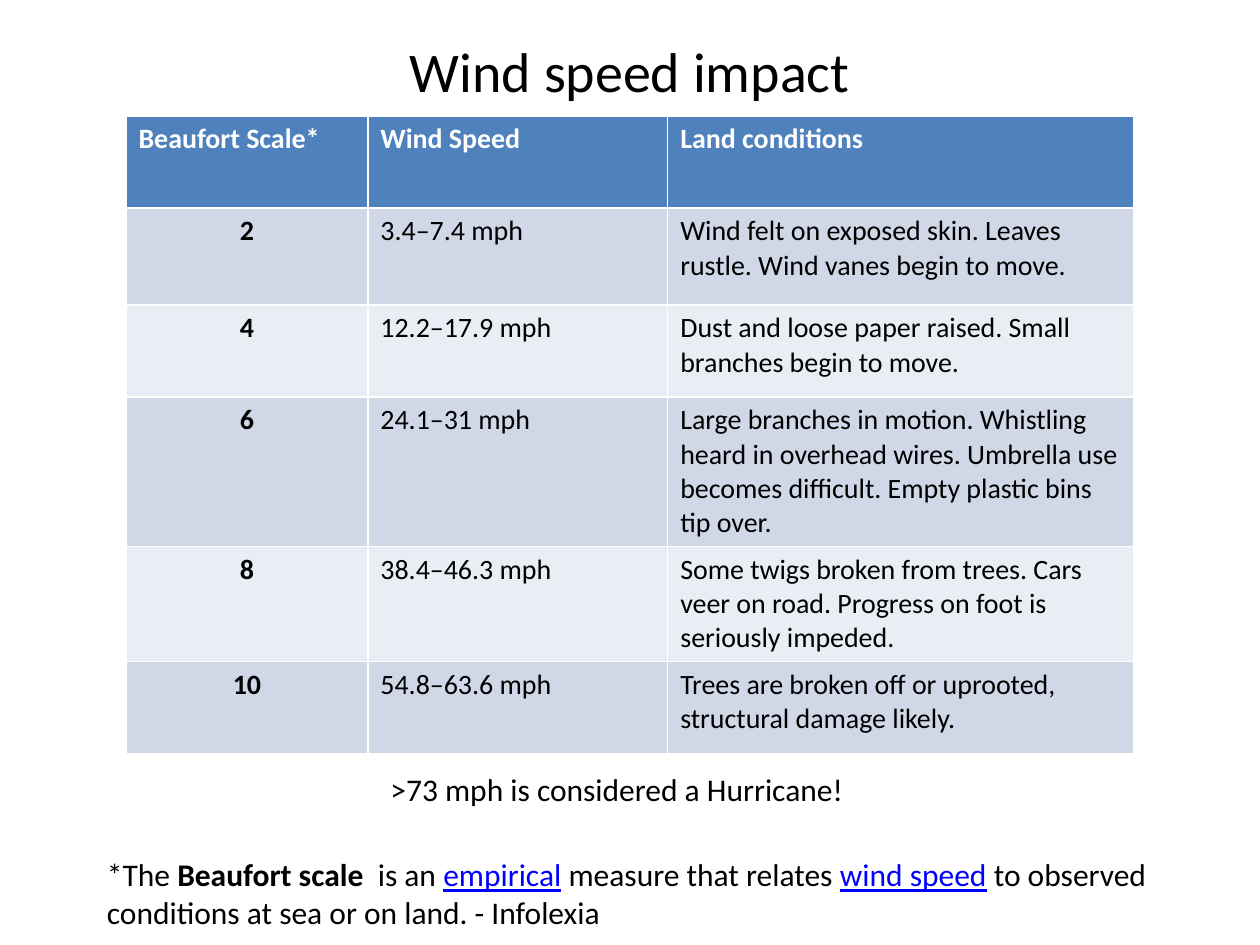
from pptx import Presentation
from pptx.dml.color import RGBColor
from pptx.enum.text import MSO_ANCHOR, PP_ALIGN
from pptx.util import Inches, Pt

CENTER = PP_ALIGN.CENTER
LEFT = PP_ALIGN.LEFT
MIDDLE = MSO_ANCHOR.MIDDLE
FONT = "Calibri"
COLORS = {
    "ink": "000000",
    "white": "FFFFFF",
    "head": "4F81BD",
    "odd": "D0D8E8",
    "even": "E9EDF4",
    "link": "0000FF",
}
WIDE, HIGH = 10, 7.5
COLS = [1.92, 2.38, 3.7]
ROWS = [0.73, 0.77, 0.73, 0.73, 0.73, 0.73]
SCALE = [
    ("Beaufort Scale*", "Wind Speed", "Land conditions"),
    ("2", "3.4–7.4 mph",
     "Wind felt on exposed skin. Leaves rustle. Wind vanes begin to move."),
    ("4", "12.2–17.9 mph",
     "Dust and loose paper raised. Small branches begin to move."),
    ("6", "24.1–31 mph",
     "Large branches in motion. Whistling heard in overhead wires. "
     "Umbrella use becomes difficult. Empty plastic bins tip over."),
    ("8", "38.4–46.3 mph",
     "Some twigs broken from trees. Cars veer on road. "
     "Progress on foot is seriously impeded."),
    ("10", "54.8–63.6 mph",
     "Trees are broken off or uprooted, structural damage likely."),
]
NOTE = [
    ("*The ", "plain"),
    ("Beaufort scale", "bold"),
    ("  is an ", "plain"),
    ("empirical", "link"),
    (" measure that relates ", "plain"),
    ("wind speed", "link"),
    (" to observed conditions at sea or on land. - Infolexia", "plain"),
]


def paint(name):
    return RGBColor.from_string(COLORS[name])


def style(run, size, color="ink", bold=False, line=False):
    font = run.font
    font.name = FONT
    font.size = Pt(size)
    font.bold = bold
    font.underline = line
    font.color.rgb = paint(color)


def place(shape, left, top, width, height):
    shape.left, shape.top = Inches(left), Inches(top)
    shape.width, shape.height = Inches(width), Inches(height)


def add_title(slide, text):
    title = slide.shapes.title
    place(title, 0.05 * WIDE, 0.17, 0.9 * WIDE, 0.78)
    frame = title.text_frame
    frame.text = text
    frame.vertical_anchor = MIDDLE
    para = frame.paragraphs[0]
    para.alignment = CENTER
    style(para.runs[0], 32)


def fill_cell(cell, text, row, col):
    head = row == 0
    band = "head" if head else ("odd" if row % 2 else "even")
    cell.fill.solid()
    cell.fill.fore_color.rgb = paint(band)
    cell.text_frame.text = text
    para = cell.text_frame.paragraphs[0]
    para.alignment = CENTER if col == 0 and not head else LEFT
    style(para.runs[0], 16, "white" if head else "ink", head or col == 0)


def add_scale(slide):
    table = slide.shapes.add_table(
        len(ROWS), len(COLS), Inches(0.1 * WIDE), Inches(0.92),
        Inches(sum(COLS)), Inches(sum(ROWS))).table
    for col, width in enumerate(COLS):
        table.columns[col].width = Inches(width)
    for row, height in enumerate(ROWS):
        table.rows[row].height = Inches(height)
        for col, text in enumerate(SCALE[row]):
            fill_cell(table.cell(row, col), text, row, col)


def add_note(slide, parts, *area):
    box = slide.shapes.add_textbox(*map(Inches, area))
    frame = box.text_frame
    frame.word_wrap = True
    para = frame.paragraphs[0]
    for text, kind in parts:
        run = para.add_run()
        run.text = text
        link = kind == "link"
        style(run, 18, "link" if link else "ink", kind == "bold", link)


def main():
    deck = Presentation()
    deck.slide_width, deck.slide_height = Inches(WIDE), Inches(HIGH)
    slide = deck.slides.add_slide(deck.slide_layouts[5])
    add_title(slide, "Wind speed impact")
    add_scale(slide)
    add_note(slide, [(">73 mph is considered a Hurricane!", "plain")],
             0.3 * WIDE, 6.06, 4.58, 0.4)
    add_note(slide, NOTE, 0.75, 6.74, 8.92, 0.71)
    deck.save("out.pptx")


if __name__ == "__main__":
    main()
